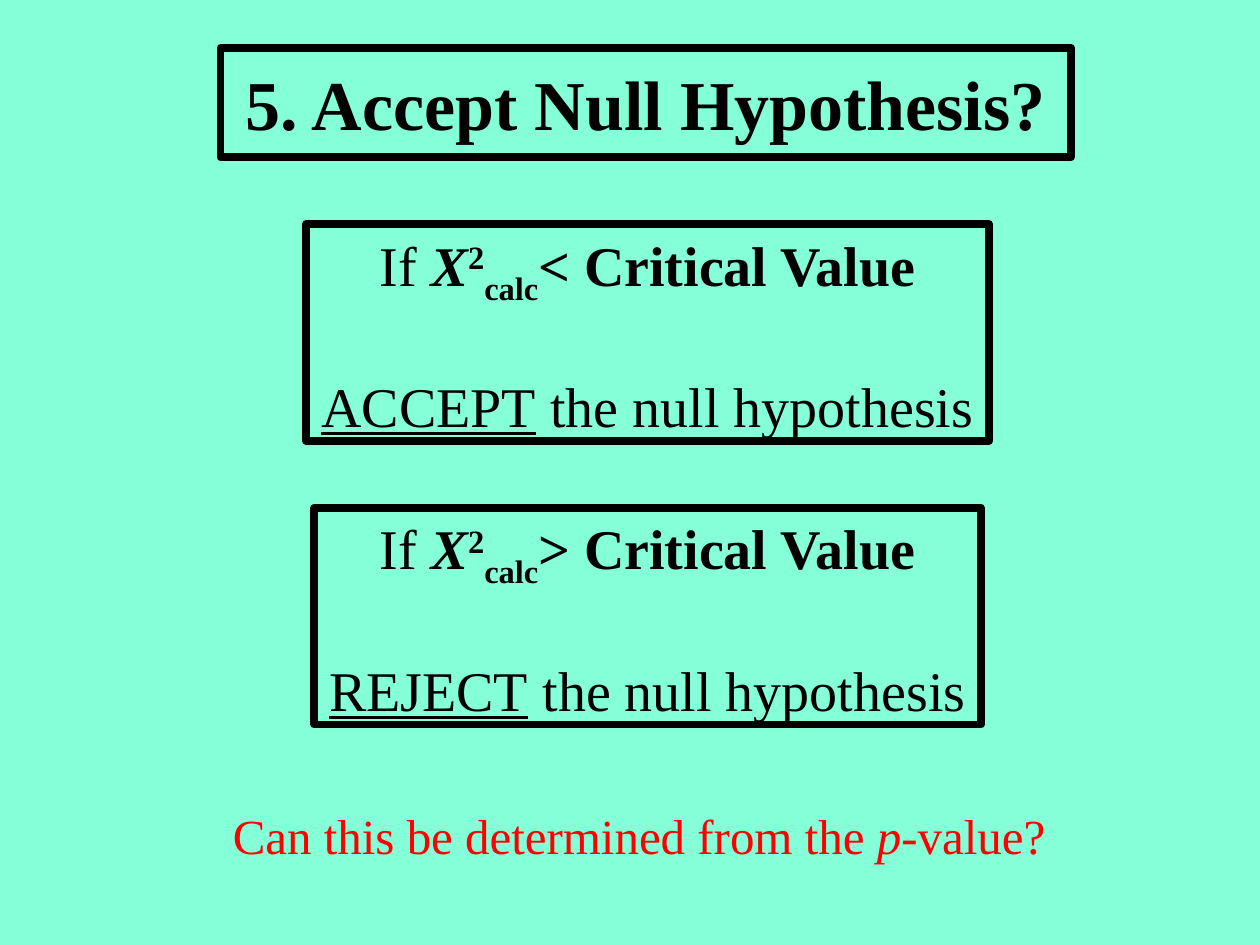
from pptx import Presentation, util as u
from pptx.dml.color import RGBColor
from pptx.enum import text
from lxml import etree

FACE, BLACK, RED, MINT = "Times New Roman", "000000", "FF0000", "84FFD8"


# Content: each run is (wording, style marks, baseline shift in %)
def rule(sign, verdict):
    return [
        [("If ", "", 0), ("X", "bi", 0), ("2", "b", 30), ("calc", "b", -25),
         (sign + " Critical Value", "b", 0)],
        [(verdict, "u", 0), (" the null hypothesis", "", 0)],
    ]


TITLE = [[("5. Accept Null Hypothesis?", "b", 0)]]
ASK = [[("Can this be determined from the ", "", 0), ("p", "i", 0),
        ("-value?", "", 0)]]

# Rule boxes share a centre line, a height and a pitch
MID, TOP, HIGH, PITCH = 5.14, 1.78, 1.72, 2.25
RULES = [(rule("<", "ACCEPT"), 5.42), (rule(">", "REJECT"), 5.29)]

prs = Presentation()
prs.slide_width, prs.slide_height = u.Inches(10), u.Inches(7.5)
slide = prs.slides.add_slide(prs.slide_layouts[6])


def tint(code):
    return RGBColor.from_string(code)


def add_box(area, paras, size, color=BLACK, framed=True, wrap=True, gap=0):
    box = slide.shapes.add_textbox(*map(u.Inches, area))
    if framed:
        box.line.color.rgb = tint(BLACK)
        box.line.width = u.Pt(4.5)
        etree.SubElement(box.line._get_or_add_ln(),
                         "{http://schemas.openxmlformats.org/drawingml/2006/main}round")
    frame = box.text_frame
    frame.word_wrap = wrap
    for n, runs in enumerate(paras):
        para = frame.add_paragraph() if n else frame.paragraphs[0]
        para.alignment = text.PP_ALIGN.CENTER if framed else text.PP_ALIGN.LEFT
        para.space_before = u.Pt(gap if n else 0)
        para.font.name, para.font.size = FACE, u.Pt(size)
        para.font.color.rgb = tint(color)
        for words, marks, shift in runs:
            run = para.add_run()
            run.text = words
            font = run.font
            font.name, font.size = FACE, u.Pt(size)
            font.color.rgb = tint(color)
            font.bold, font.italic, font.underline = (m in marks for m in "biu")
            if shift:
                run._r.get_or_add_rPr().set("baseline", str(shift * 1000))
    return frame


# Background
fill = slide.background.fill
fill.solid()
fill.fore_color.rgb = tint(MINT)

# Title
head = add_box((1.75, 0.38, 6.75, 0.87), TITLE, 40)
head.vertical_anchor = text.MSO_ANCHOR.MIDDLE

# Decision rules
for row, (paras, wide) in enumerate(RULES):
    add_box((MID - wide / 2, TOP + row * PITCH, wide, HIGH), paras, 32,
            wrap=False, gap=37)

# Closing question
add_box((1.75, 6.34, 7, 0.57), ASK, 28, RED, framed=False)

prs.save("out.pptx")
